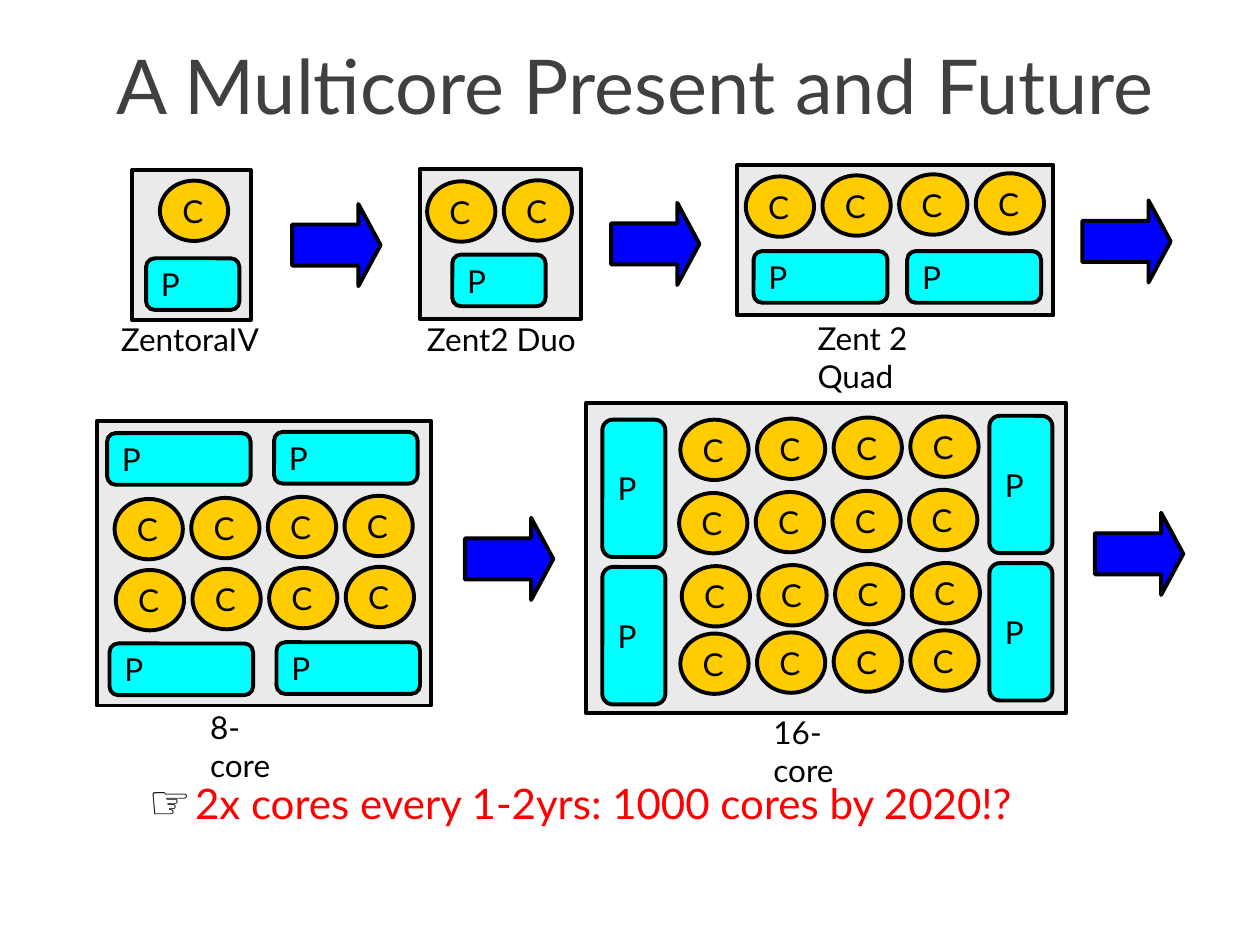
from pptx import Presentation
from pptx.dml.color import RGBColor
from pptx.enum.shapes import MSO_SHAPE
from pptx.enum.text import MSO_ANCHOR, PP_ALIGN
from pptx.util import Pt

RECT = MSO_SHAPE.RECTANGLE
ROUND = MSO_SHAPE.ROUNDED_RECTANGLE
OVAL = MSO_SHAPE.OVAL
ARROW = MSO_SHAPE.RIGHT_ARROW
MIDDLE = MSO_ANCHOR.MIDDLE
LEFT, CENTER = PP_ALIGN.LEFT, PP_ALIGN.CENTER

FONT = "Lato"
BLACK, GRAY, RED = "000000", "404040", "FF0000"
PALE, GOLD, CYAN, BLUE = "EAEAEA", "FFCC00", "00FFFF", "0000FF"


def color(code):
    return RGBColor.from_string(code)


def add_run(para, text, size, code=BLACK):
    run = para.add_run()
    run.text = text
    run.font.name = FONT
    run.font.size = Pt(size)
    run.font.color.rgb = color(code)


def add_shape(slide, kind, x, y, w, h, fill, text=""):
    shape = slide.shapes.add_shape(kind, Pt(x), Pt(y), Pt(w), Pt(h))
    shape.shadow.inherit = False
    shape.fill.solid()
    shape.fill.fore_color.rgb = color(fill)
    shape.line.color.rgb = color(BLACK)
    shape.line.width = Pt(2.25)
    if text:
        frame = shape.text_frame
        frame.word_wrap = False
        frame.vertical_anchor = MIDDLE
        frame.paragraphs[0].alignment = LEFT
        add_run(frame.paragraphs[0], text, 18)
    return shape


def add_text(slide, x, y, w, h):
    frame = slide.shapes.add_textbox(Pt(x), Pt(y), Pt(w), Pt(h)).text_frame
    frame.word_wrap = True
    return frame


def add_label(slide, x, y, w, text):
    add_run(add_text(slide, x, y, w, 29).paragraphs[0], text, 18)


def add_chip(slide, x, y, w, h):
    add_shape(slide, RECT, x, y, w, h, PALE)


def add_cores(slide, x, y, count):
    # Each row climbs slightly from left to right
    for i in range(count):
        add_shape(slide, OVAL, x + 43.8 * i, y - 0.6 * i, 39, 34.5, GOLD, "C")


def add_cache(slide, x, y, w, h=29.5):
    add_shape(slide, ROUND, x, y, w, h, CYAN, "P")


def add_arrow(slide, x, y):
    arrow = add_shape(slide, ARROW, x, y, 50.5, 47, BLUE)
    arrow.adjustments[0] = 0.5
    arrow.adjustments[1] = 0.27


def draw_small(slide):
    # One core
    add_chip(slide, 75.6, 97.2, 67.7, 85.7)
    add_cores(slide, 91.4, 103.2, 1)
    add_cache(slide, 83.5, 147.6, 53.3)
    add_label(slide, 62, 179.5, 101, "ZentoraIV")
    # Two cores
    add_chip(slide, 239.8, 96.5, 92.2, 85.7)
    add_cores(slide, 244.1, 103.6, 2)
    add_cache(slide, 258.5, 145.5, 53.3)
    add_label(slide, 236.9, 179.3, 108, "Zent2 Duo")
    # Four cores
    add_chip(slide, 421.2, 94.5, 180.7, 85.7)
    add_cores(slide, 426.2, 100.8, 4)
    for x in (430.6, 518.4):
        add_cache(slide, x, 143.5, 76.5)
    add_label(slide, 460.1, 178.6, 100, "Zent 2 Quad")


def draw_eight(slide):
    add_chip(slide, 55.4, 240.5, 190.8, 162.7)
    for x, y in ((61.2, 247.5), (62.6, 367.7)):
        for i in range(2):
            add_cache(slide, x + 95.4 * i, y - 0.7 * i, 82)
    for x, y in ((65.5, 285.1), (66.2, 325.7)):
        add_cores(slide, x, y, 4)
    add_label(slide, 113, 401, 62, "8-core")


def draw_sixteen(slide):
    add_chip(slide, 334.8, 230.4, 274.3, 177.1)
    for x, y in ((388.8, 239.8), (388.1, 281.7), (389.6, 323.5), (388.8, 362)):
        add_cores(slide, x, y, 4)
    for x, y in ((344.2, 239.8), (565.4, 237.6)):
        for i in range(2):
            add_cache(slide, x, y + 84.2 * i, 36, 78.5)
    add_label(slide, 434.9, 403.9, 71, "16-core")


def main():
    deck = Presentation()
    deck.slide_width, deck.slide_height = Pt(720), Pt(540)
    slide = deck.slides.add_slide(deck.slide_layouts[6])

    # Title
    title = add_text(slide, 54, 30.2, 618, 36)
    title.vertical_anchor = MIDDLE
    title.paragraphs[0].alignment = CENTER
    add_run(title.paragraphs[0], "A Multicore Present and Future", 43.2, GRAY)

    # Chips and the arrows between them
    draw_small(slide)
    draw_eight(slide)
    draw_sixteen(slide)
    for x, y in ((167, 116.6), (349.2, 115.9), (618.5, 114.5),
                 (265.7, 295.9), (625.7, 293)):
        add_arrow(slide, x, y)

    # Closing remark
    para = add_text(slide, 77.8, 444.2, 563, 40.3).paragraphs[0]
    para.line_spacing = 0.8
    props = para._p.get_or_add_pPr()
    props.set("marL", str(Pt(27)))
    props.set("indent", str(-Pt(27)))
    add_run(para, "☞", 27)
    add_run(para, " ", 9, GRAY)
    add_run(para, "2x cores every 1-2yrs: 1000 cores by 2020!?", 24, RED)

    deck.save("out.pptx")


if __name__ == "__main__":
    main()
